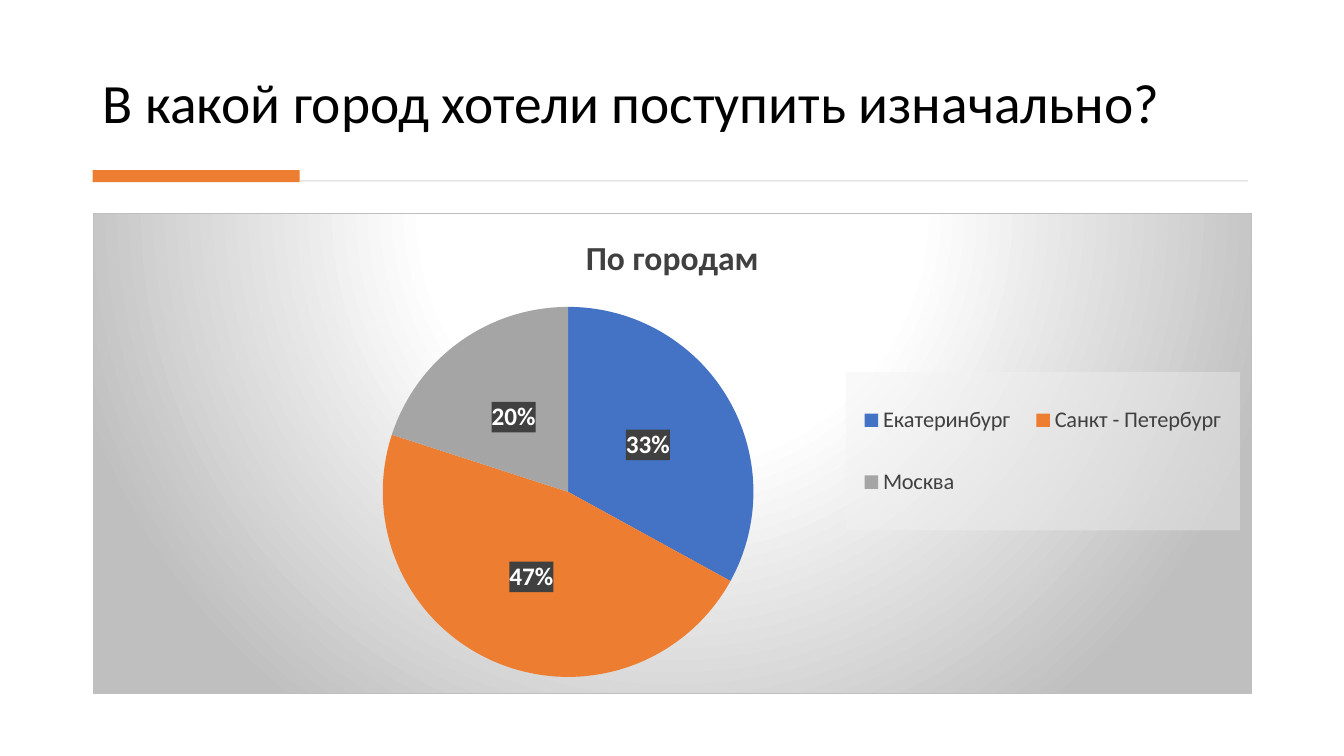
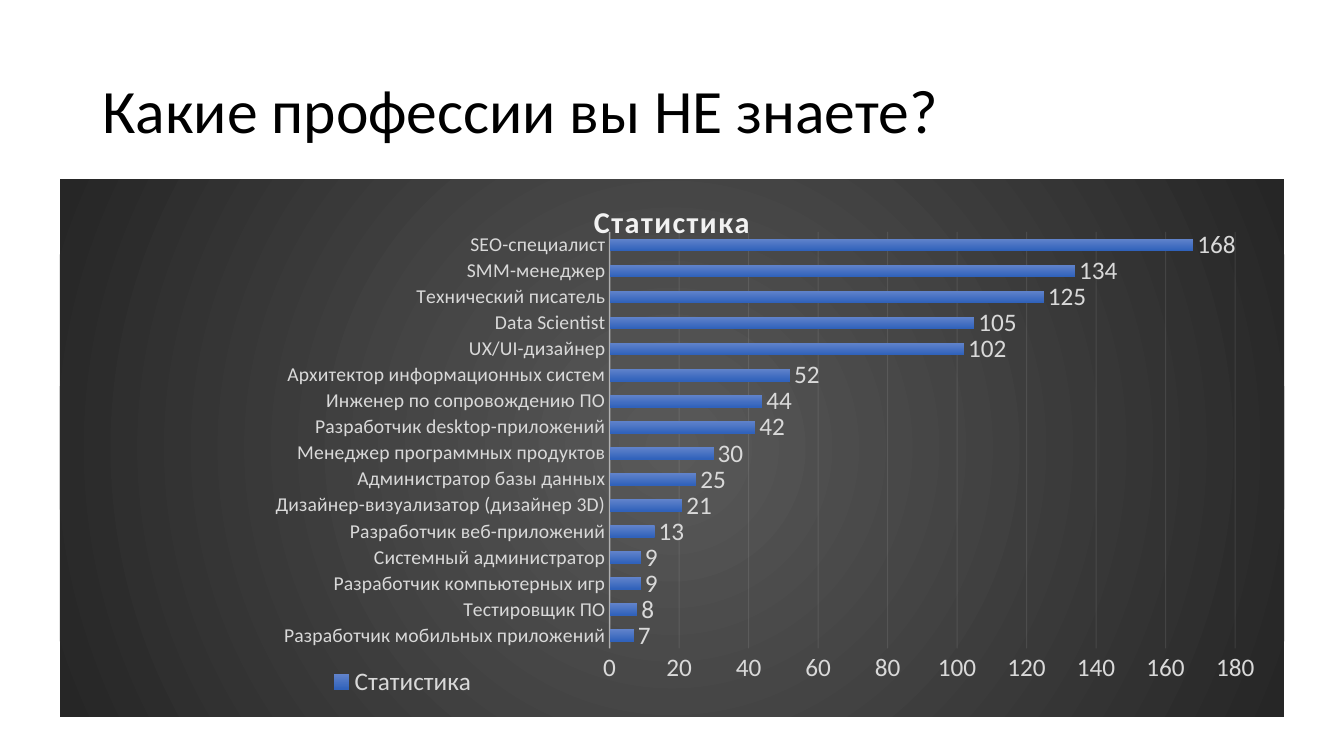
import pptx
import pptx.chart.data
import pptx.dml.color
import pptx.enum.chart
import pptx.enum.shapes
import pptx.enum.text
import pptx.oxml
import pptx.oxml.ns
import pptx.util

FONT = "Calibri"
BLACK, WHITE, ORANGE, RULE_GREY = "000000", "FFFFFF", "ED7D31", "D5D5D5"
DARK, SILVER, PALE, LIGHT = "404040", "BFBFBF", "D9D9D9", "F2F2F2"
DRAWING = "http://schemas.openxmlformats.org/drawingml/2006/main"
CHART = "http://schemas.openxmlformats.org/drawingml/2006/chart"

CITIES = {"Екатеринбург": 33, "Санкт - Петербург": 47, "Москва": 20}
CITY_COLOURS = ["4472C4", ORANGE, "A5A5A5"]
PROFESSIONS = {
    "Разработчик мобильных приложений": 7,
    "Тестировщик ПО": 8,
    "Разработчик компьютерных игр": 9,
    "Системный администратор": 9,
    "Разработчик веб-приложений": 13,
    "Дизайнер-визуализатор (дизайнер 3D)": 21,
    "Администратор базы данных": 25,
    "Менеджер программных продуктов": 30,
    "Разработчик desktop-приложений": 42,
    "Инженер по сопровождению ПО": 44,
    "Архитектор информационных систем": 52,
    "UX/UI-дизайнер": 102,
    "Data Scientist": 105,
    "Технический писатель": 125,
    "SMM-менеджер": 134,
    "SEO-специалист": 168,
}


def colour(value):
    return pptx.dml.color.RGBColor.from_string(value)


def set_font(font, size, value, bold=False):
    font.name = FONT
    font.size = pptx.util.Pt(size)
    font.bold = bold
    font.color.rgb = colour(value)


def child(element, tag):
    return element.find(pptx.oxml.ns.qn(tag))


def set_opacity(element, percent):
    for node in element.iter(pptx.oxml.ns.qn("a:srgbClr")):
        alpha = node.makeelement(pptx.oxml.ns.qn("a:alpha"), {"val": str(percent * 1000)})
        node.append(alpha)


def solid_fill(value, opacity):
    return (f'<a:solidFill><a:srgbClr val="{value}"><a:alpha val="{opacity * 1000}"/>'
            '</a:srgbClr></a:solidFill>')


def radial_fill(stops, top, bottom):
    marks = "".join(f'<a:gs pos="{position * 1000}"><a:srgbClr val="{value}"/></a:gs>'
                    for position, value in stops)
    return (f'<a:gradFill><a:gsLst>{marks}</a:gsLst><a:path path="circle">'
            f'<a:fillToRect l="50000" t="{top * 1000}" r="50000" b="{bottom * 1000}"/>'
            '</a:path></a:gradFill>')


def paint(element, fill, border=None):
    """Give a chart part that already has a font its background."""
    inner = f'<a:solidFill><a:srgbClr val="{border}"/></a:solidFill>' if border else "<a:noFill/>"
    properties = pptx.oxml.parse_xml(
        f'<c:spPr xmlns:c="{CHART}" xmlns:a="{DRAWING}">{fill}<a:ln w="9525">{inner}</a:ln></c:spPr>')
    child(element, "c:txPr").addprevious(properties)


def manual_layout(box, inner=False):
    target = '<c:layoutTarget val="inner"/>' if inner else ""
    modes = '<c:xMode val="edge"/><c:yMode val="edge"/>'
    sizes = "".join(f'<c:{name} val="{share}"/>' for name, share in zip("xywh", box))
    return pptx.oxml.parse_xml(
        f'<c:layout xmlns:c="{CHART}"><c:manualLayout>{target}{modes}{sizes}'
        '</c:manualLayout></c:layout>')


def drop_layout(element):
    old = child(element, "c:layout")
    if old is not None:
        element.remove(old)


class Deck:
    """Holds the style and the current slide; boxes are percents of the slide."""

    def __init__(self):
        self.presentation = pptx.Presentation()
        self.presentation.slide_width = pptx.util.Inches(13.33)
        self.presentation.slide_height = pptx.util.Inches(7.5)
        self.slide = None

    def place(self, box):
        width, height = self.presentation.slide_width, self.presentation.slide_height
        return [int(share * side / 100) for share, side in zip(box, (width, height) * 2)]

    def new_slide(self):
        self.slide = self.presentation.slides.add_slide(self.presentation.slide_layouts[6])

    def title(self, text, box, size, anchor):
        frame = self.slide.shapes.add_textbox(*self.place(box)).text_frame
        frame.word_wrap = True
        frame.vertical_anchor = anchor
        paragraph = frame.paragraphs[0]
        paragraph.line_spacing = 0.9
        run = paragraph.add_run()
        run.text = text
        set_font(run.font, size, BLACK)

    def bar(self, box, value):
        shape = self.slide.shapes.add_shape(
            pptx.enum.shapes.MSO_SHAPE.RECTANGLE, *self.place(box))
        shape.shadow.inherit = False
        shape.fill.solid()
        shape.fill.fore_color.rgb = colour(value)
        shape.line.fill.background()

    def chart(self, kind, name, values, box, title_font, text_font, background, border=None):
        data = pptx.chart.data.CategoryChartData()
        data.categories = list(values)
        data.add_series(name, list(values.values()))
        chart = self.slide.shapes.add_chart(kind, *self.place(box), data).chart
        set_font(chart.font, *text_font)
        paint(chart._chartSpace, background, border)
        chart.has_title = True
        run = chart.chart_title.text_frame.paragraphs[0].add_run()
        run.text = name
        set_font(run.font, *title_font, bold=True)
        return chart

    def plot_box(self, chart, box):
        area = chart._chartSpace.chart.plotArea
        drop_layout(area)
        area.insert(0, manual_layout(box, inner=True))

    def legend(self, chart, position, box, font):
        chart.has_legend = True
        legend = chart.legend
        legend.position = position
        legend.include_in_layout = False
        set_font(legend.font, *font)
        drop_layout(legend._element)
        child(legend._element, "c:legendPos").addnext(manual_layout(box))
        return legend

    def labels(self, plot, position, font, bold=False):
        plot.has_data_labels = True
        labels = plot.data_labels
        labels.position = position
        set_font(labels.font, *font, bold=bold)
        return labels

    def axis_style(self, axis, size):
        axis.major_tick_mark = axis.minor_tick_mark = pptx.enum.chart.XL_TICK_MARK.NONE
        set_font(axis.tick_labels.font, size, PALE)

    def line_style(self, line_format, points):
        line_format.color.rgb = colour(LIGHT)
        line_format.width = pptx.util.Pt(points)


def cities_slide(deck):
    deck.new_slide()
    deck.title("В какой город хотели поступить изначально?", (6.9, 3.73, 86.2, 14.8),
               39.6, pptx.enum.text.MSO_ANCHOR.BOTTOM)

    # Rule with accent
    deck.bar((7.1, 23.87, 85.75, 0.13), RULE_GREY)
    deck.bar((6.9, 22.5, 15.4, 1.6), ORANGE)

    # Pie chart
    chart = deck.chart(
        pptx.enum.chart.XL_CHART_TYPE.PIE, "По городам", CITIES, (6.9, 28.2, 86.25, 63.6),
        (24, DARK), (10, BLACK),
        radial_fill([(0, WHITE), (39, WHITE), (100, SILVER)], -80, 180), SILVER)
    deck.plot_box(chart, (0.25, 0.19, 0.32, 0.78))
    legend = deck.legend(chart, pptx.enum.chart.XL_LEGEND_POSITION.RIGHT,
                         (0.65, 0.33, 0.34, 0.33), (16, DARK))
    paint(legend._element, solid_fill(LIGHT, 39))
    plot = chart.plots[0]
    plot.vary_by_categories = True
    for index, value in enumerate(CITY_COLOURS):
        fill = plot.series[0].points[index].format.fill
        fill.solid()
        fill.fore_color.rgb = colour(value)
    labels = deck.labels(plot, pptx.enum.chart.XL_LABEL_POSITION.CENTER, (18, WHITE), bold=True)
    labels.show_percentage = True
    labels.show_value = False
    labels.number_format = "0%"
    labels.number_format_is_linked = False
    paint(labels._element, solid_fill(DARK, 85))


def professions_slide(deck):
    deck.new_slide()
    deck.title("Какие профессии вы НЕ знаете?", (6.9, 5.33, 86.25, 19.33),
               44, pptx.enum.text.MSO_ANCHOR.MIDDLE)

    # Bar chart
    chart = deck.chart(
        pptx.enum.chart.XL_CHART_TYPE.BAR_CLUSTERED, "Статистика", PROFESSIONS,
        (4.45, 23.7, 91.1, 71.1), (21.6, LIGHT), (18, BLACK),
        radial_fill([(0, "595959"), (100, "262626")], 50, 50))
    title_run = chart.chart_title.text_frame.paragraphs[0].runs[0]
    title_run.font._element.set("spc", "100")
    deck.plot_box(chart, (0.449, 0.098, 0.511, 0.775))
    deck.legend(chart, pptx.enum.chart.XL_LEGEND_POSITION.BOTTOM,
                (0.21, 0.9, 0.14, 0.07), (18, PALE))
    plot = chart.plots[0]
    plot.gap_width = 115
    plot.overlap = -20
    plot.vary_by_categories = False
    fill = plot.series[0].format.fill
    fill.gradient()
    fill.gradient_angle = 270
    for stop, value in zip(fill.gradient_stops, ("6183CB", "3062BB")):
        stop.color.rgb = colour(value)
    labels = deck.labels(plot, pptx.enum.chart.XL_LABEL_POSITION.OUTSIDE_END, (18, PALE))
    labels.show_value = True

    # Axes and grid
    names, counts = chart.category_axis, chart.value_axis
    deck.axis_style(names, 14)
    deck.line_style(names.format.line, 1)
    set_opacity(child(names._element, "c:spPr"), 54)
    deck.axis_style(counts, 18)
    counts.format.line.fill.background()
    counts.minimum_scale, counts.maximum_scale, counts.major_unit = 0, 180, 20
    deck.line_style(counts.major_gridlines.format.line, 0.75)
    set_opacity(child(counts._element, "c:majorGridlines"), 10)


def main():
    deck = Deck()
    cities_slide(deck)
    professions_slide(deck)
    deck.presentation.save("out.pptx")


if __name__ == "__main__":
    main()
